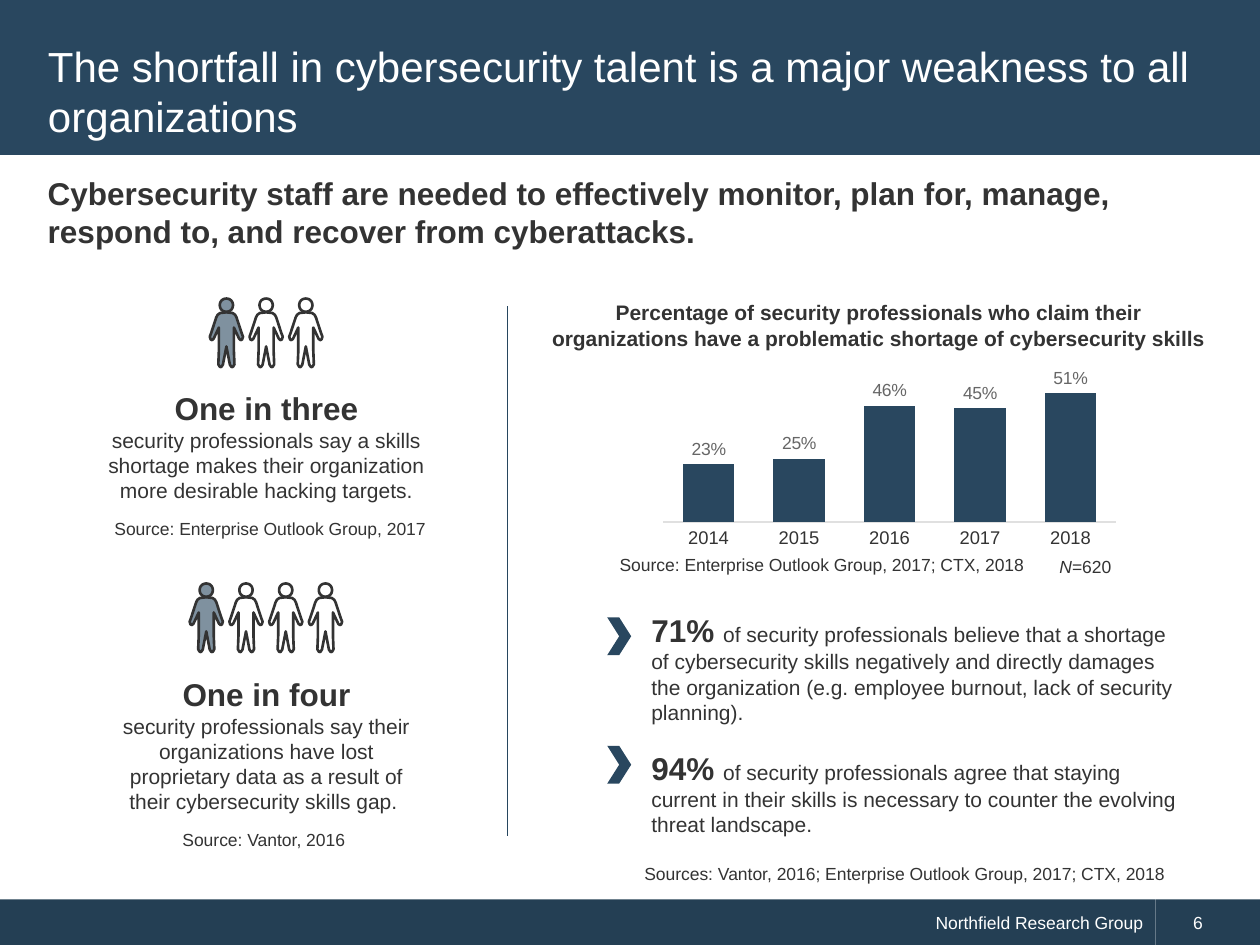
"""Build a slide on the cybersecurity talent shortfall."""
from math import cos, pi, sin

from lxml import etree
from pptx import Presentation
from pptx.chart import data
from pptx.dml.color import RGBColor
from pptx.enum import chart as ch, shapes as sh, text as tx
from pptx.oxml import ns
from pptx.util import Pt

NAVY = RGBColor(0x29, 0x47, 0x5F)
FOOTER_NAVY = RGBColor(0x24, 0x3F, 0x54)
DIVIDER_NAVY = RGBColor(0x27, 0x46, 0x5E)
STEEL = RGBColor(0x7F, 0x91, 0x9F)
INK = RGBColor(0x33, 0x33, 0x33)
LABEL_GRAY = RGBColor(0x66, 0x66, 0x66)
AXIS_GRAY = RGBColor(0xE0, 0xE0, 0xE0)
WHITE = RGBColor(0xFF, 0xFF, 0xFF)
LEFT, CENTER, RIGHT = tx.PP_ALIGN.LEFT, tx.PP_ALIGN.CENTER, tx.PP_ALIGN.RIGHT

HALF_BODY = [(0, 79), (36, 83), (50, 93), (58, 108), (70, 145), (88, 200), (95, 218),
             (90, 234), (82, 238), (73, 230), (43, 166), (43, 300), (46, 376),
             (38, 390), (30, 392), (20, 378), (0, 274)]
BODY = HALF_BODY + [(-x, y) for x, y in HALF_BODY[-2:0:-1]]
HEAD = [(38 * cos(i * pi / 16), 38 + 38 * sin(i * pi / 16)) for i in range(32)]

prs = Presentation()
prs.slide_width, prs.slide_height = Pt(720), Pt(540)
slide = prs.slides.add_slide(prs.slide_layouts[1])
shapes = slide.shapes


def write(shape, paragraphs, align=LEFT, color=INK, anchor=tx.MSO_ANCHOR.TOP):
    """Fill a shape with paragraphs, each a list of (text, size, bold) runs."""
    frame = shape.text_frame
    frame.word_wrap = True
    frame.auto_size = tx.MSO_AUTO_SIZE.NONE
    frame.vertical_anchor = anchor
    for i, runs in enumerate(paragraphs):
        paragraph = frame.add_paragraph() if i else frame.paragraphs[0]
        paragraph.alignment = align
        paragraph.space_before = Pt(0)
        paragraph.font.name = "Arial"
        paragraph.font.color.rgb = color
        paragraph.font.size, paragraph.font.bold = Pt(runs[0][1]), runs[0][2]
        for words, size, bold in runs:
            run = paragraph.add_run()
            run.text = words
            if len(runs) > 1:
                run.font.size, run.font.bold = Pt(size), bold
    return frame


def add_solid(preset, color, left, top, width, height):
    """Add a plain preset shape without line or shadow."""
    solid = shapes.add_shape(preset, Pt(left), Pt(top), Pt(width), Pt(height))
    solid.shadow.inherit = False
    solid.fill.solid()
    solid.fill.fore_color.rgb = color
    solid.line.fill.background()
    return solid


header = add_solid(sh.MSO_SHAPE.RECTANGLE, NAVY, 0, 0, 720, 88.6)
shapes.title._element.addprevious(header._element)
title = shapes.title
title.left, title.top, title.width, title.height = Pt(20.2), Pt(17.3), Pt(679), Pt(69)
write(title, [[("The shortfall in cybersecurity talent is a major weakness to all organizations",
                24, False)]], color=WHITE, anchor=tx.MSO_ANCHOR.MIDDLE)

publisher = add_solid(sh.MSO_SHAPE.RECTANGLE, FOOTER_NAVY, 0, 514, 660.2, 26.6)
page_number = add_solid(sh.MSO_SHAPE.RECTANGLE, FOOTER_NAVY, 660.2, 514, 59.8, 26.6)
write(publisher, [[("Northfield Research Group", 10, False)]], RIGHT, WHITE,
      tx.MSO_ANCHOR.MIDDLE)
write(page_number, [[("6", 10, False)]], LEFT, WHITE,
      tx.MSO_ANCHOR.MIDDLE).margin_left = Pt(21.6)

findings = slide.placeholders[1]
findings.left, findings.top, findings.width, findings.height = Pt(365), Pt(345.6), Pt(316.8), Pt(138)
findings_frame = write(findings, [
    [("71% ", 18, True),
     ("of security professionals believe that a shortage of cybersecurity skills negatively "
      "and directly damages the organization (e.g. employee burnout, lack of security "
      "planning).", 12, False)],
    [("94% ", 18, True),
     ("of security professionals agree that staying current in their skills is necessary to "
      "counter the evolving threat landscape.", 12, False)]])
for finding in findings_frame.paragraphs:
    properties = finding._p.get_or_add_pPr()
    properties.set("marL", "0")
    properties.set("indent", "0")
    etree.SubElement(properties, ns.qn("a:buNone"))
findings_frame.paragraphs[1].space_before = Pt(14)
for top in (352.8, 426.2):
    add_solid(sh.MSO_SHAPE.CHEVRON, NAVY, 347, top, 13.7, 21.6)

texts = [
    (20.2, 95.8, 679, 51, LEFT,
     [("Cybersecurity staff are needed to effectively monitor, plan for, manage, "
       "respond to, and recover from cyberattacks.", 18, True)]),
    (305.3, 167.8, 393.8, 36, CENTER,
     [("Percentage of security professionals who claim their organizations have a "
       "problematic shortage of cybersecurity skills", 12, True)]),
    (54.7, 218.9, 195.1, 72.7, CENTER,
     [("One in three", 18, True),
      ("security professionals say a skills shortage makes their organization "
       "more desirable hacking targets.", 12, False)]),
    (54.7, 382.3, 195.1, 87.1, CENTER,
     [("One in four", 18, True),
      ("security professionals say their organizations have lost proprietary data "
       "as a result of their cybersecurity skills gap. ", 12, False)]),
    (58.3, 292.3, 249.1, 19.4, LEFT, [("Source: Enterprise Outlook Group, 2017", 10, False)]),
    (97.2, 470.2, 131.8, 19.4, LEFT, [("Source: Vantor, 2016", 10, False)]),
    (347, 313.2, 249.1, 19.4, LEFT,
     [("Source: Enterprise Outlook Group, 2017; CTX, 2018", 10, False)]),
    (347, 489.6, 325.4, 19.4, RIGHT,
     [("Sources: Vantor, 2016; Enterprise Outlook Group, 2017; CTX, 2018", 10, False)]),
]
for left, top, width, height, align, lines in texts:
    box = shapes.add_textbox(Pt(left), Pt(top), Pt(width), Pt(height))
    write(box, [[line] for line in lines], align)

sample_size = shapes.add_textbox(Pt(598.3), Pt(313.9), Pt(44.6), Pt(19.4))
sample_frame = write(sample_size, [[("N", 10, False), ("=620", 10, False)]])
sample_frame.word_wrap = False
sample_frame.paragraphs[0].runs[0].font.italic = True

for count, first_center, top in ((3, 129.4, 170.6), (4, 117.9, 333.4)):
    for i in range(count):
        builder = shapes.build_freeform(*BODY[0], scale=Pt(0.1))
        builder.add_line_segments(BODY[1:])
        builder.move_to(*HEAD[0])
        builder.add_line_segments(HEAD[1:])
        person = builder.convert_to_shape(Pt(first_center + 22.7 * i), Pt(top))
        person.shadow.inherit = False
        person.fill.solid()
        person.fill.fore_color.rgb = WHITE if i else STEEL
        person.line.color.rgb = INK
        person.line.width = Pt(1.5)

divider = shapes.add_connector(sh.MSO_CONNECTOR.STRAIGHT, Pt(290.2), Pt(175), Pt(290.2), Pt(478))
divider.line.color.rgb = DIVIDER_NAVY
divider.line.width = Pt(0.75)
etree.SubElement(divider._element.spPr, ns.qn("a:effectLst"))

shortage = data.CategoryChartData(number_format="0%")
shortage.categories = ["2014", "2015", "2016", "2017", "2018"]
shortage.add_series("Series 1", (0.23, 0.25, 0.46, 0.45, 0.51))
chart = shapes.add_chart(ch.XL_CHART_TYPE.COLUMN_CLUSTERED, Pt(373.7), Pt(209.5),
                         Pt(269.3), Pt(105.8), shortage).chart
chart.has_legend = chart.has_title = False
chart.font.name, chart.font.size = "Arial", Pt(11)
chart.font.color.rgb = INK
percent_axis = chart.value_axis
percent_axis.visible = percent_axis.has_major_gridlines = False
percent_axis.minimum_scale, percent_axis.maximum_scale = 0, 0.6
year_axis = chart.category_axis
year_axis.major_tick_mark = ch.XL_TICK_MARK.NONE
year_axis.tick_labels.font.size = Pt(10.5)
year_axis.format.line.color.rgb = AXIS_GRAY
year_axis.format.line.width = Pt(0.75)
columns = chart.plots[0]
columns.gap_width = 75
columns.vary_by_categories = False
columns.series[0].format.fill.solid()
columns.series[0].format.fill.fore_color.rgb = NAVY
columns.has_data_labels = True
labels = columns.data_labels
labels.show_value = True
labels.position = ch.XL_LABEL_POSITION.OUTSIDE_END
labels.font.name, labels.font.size = "Arial", Pt(10)
labels.font.color.rgb = LABEL_GRAY

prs.save("out.pptx")
